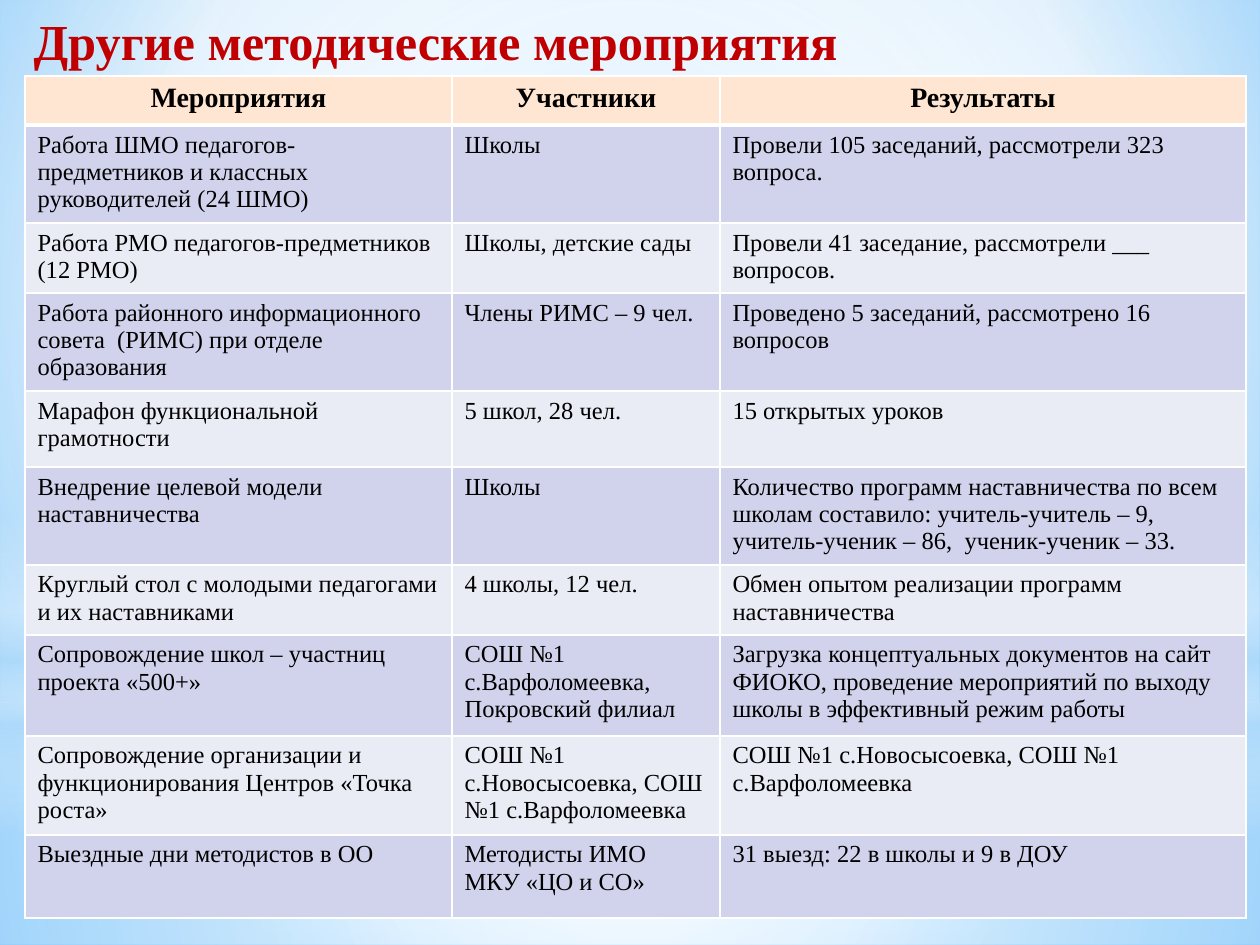
from lxml import etree
from pptx import Presentation
from pptx.dml.color import RGBColor
from pptx.enum.shapes import MSO_SHAPE
from pptx.enum.text import MSO_ANCHOR, PP_ALIGN
from pptx.oxml import parse_xml
from pptx.oxml.ns import qn
from pptx.util import Emu, Pt

RECT, OVAL = MSO_SHAPE.RECTANGLE, MSO_SHAPE.OVAL
TOP = MSO_ANCHOR.TOP
LEFT, CENTER = PP_ALIGN.LEFT, PP_ALIGN.CENTER
NS = "http://schemas.openxmlformats.org/drawingml/2006/main"
FONT = "Times New Roman"
COLORS = {
    "title": "C00000", "text": "000000", "white": "FFFFFF", "haze": "B4DCFA",
    "sky": "9ED5FF", "deep": "5BB9FF",
    "head": "FFE6D3", "odd": "D0D3EB", "even": "E9EBF5",
}


def px(n):
    return Emu(round(n * 914400 / 126))


class Deck:
    def __init__(self, width, height):
        self.prs = Presentation()
        self.prs.slide_width, self.prs.slide_height = px(width), px(height)
        self.s = self.prs.slides.add_slide(self.prs.slide_layouts[5])

    def gradient(self, parent, stops, focus=None):
        """Swap an empty fill for a gradient: circular around focus, else vertical."""
        grad = etree.Element(qn("a:gradFill"), nsmap={"a": NS}, rotWithShape="1")
        gs_list = etree.SubElement(grad, qn("a:gsLst"))
        for pos, color, alpha in stops:
            gs = etree.SubElement(gs_list, qn("a:gs"), pos=str(pos * 1000))
            clr = etree.SubElement(gs, qn("a:srgbClr"), val=COLORS[color])
            if alpha < 100:
                etree.SubElement(clr, qn("a:alpha"), val=str(alpha * 1000))
        if focus:
            path = etree.SubElement(grad, qn("a:path"), path="circle")
            sides = {k: str(v * 1000) for k, v in zip("ltrb", focus)}
            etree.SubElement(path, qn("a:fillToRect"), **sides)
        else:
            etree.SubElement(grad, qn("a:lin"), ang="5400000", scaled="0")
        parent.replace(parent.find(qn("a:noFill")), parse_xml(etree.tostring(grad)))

    def background(self, stops, focus):
        self.s.background.fill.background()
        self.gradient(self.s._element.find(".//" + qn("p:bgPr")), stops, focus)

    def glow(self, kind, x, y, w, h, stops, focus=None):
        sp = self.s.shapes.add_shape(kind, px(x), px(y), px(w), px(h))
        sp.shadow.inherit = False
        sp.fill.background()
        self.gradient(sp._element.spPr, stops, focus)
        sp.line.fill.background()

    def run(self, p, text, size, color, bold=False):
        r = p.add_run()
        r.text = text
        r.font.name, r.font.size, r.font.bold = FONT, Pt(size), bold
        r.font.color.rgb = RGBColor.from_string(COLORS[color])

    def title(self, text, x, y, w, h):
        sp = self.s.shapes.title
        self.s.shapes._spTree.append(sp._element)  # above the backdrop
        sp.left, sp.top, sp.width, sp.height = px(x), px(y), px(w), px(h)
        tf = sp.text_frame
        tf.word_wrap, tf.vertical_anchor = True, TOP
        tf.margin_top, tf.margin_bottom = px(14), 0
        p = tf.paragraphs[0]
        p.alignment = LEFT
        self.run(p, text, 28.8, "title", True)

    def borders(self, cell, widths):
        tc_pr = cell._tc.get_or_add_tcPr()
        for side, width in widths.items():
            ln = etree.SubElement(tc_pr, qn("a:ln" + side), w=str(Pt(width)))
            fill = etree.SubElement(ln, qn("a:solidFill"))
            etree.SubElement(fill, qn("a:srgbClr"), val=COLORS["white"])

    def table(self, x, y, widths, heights, rows):
        tbl = self.s.shapes.add_table(len(rows), len(widths), px(x), px(y),
                                      px(sum(widths)), px(sum(heights))).table
        for col, w in zip(tbl.columns, widths):
            col.width = px(w)
        for i, (height, row) in enumerate(zip(heights, rows)):
            tbl.rows[i].height = px(height)
            head = i == 0
            fill = "head" if head else "odd" if i % 2 else "even"
            for j, text in enumerate(row):
                cell = tbl.cell(i, j)
                self.borders(cell, {"L": 1, "R": 1, "T": 3 if i == 1 else 1,
                                    "B": 3 if head else 1})
                cell.fill.solid()
                cell.fill.fore_color.rgb = RGBColor.from_string(COLORS[fill])
                tf = cell.text_frame
                for k, line in enumerate(text.split("\n")):
                    p = tf.add_paragraph() if k else tf.paragraphs[0]
                    p.alignment = CENTER if head else LEFT
                    self.run(p, line, 16 if head else 14, "text", head)


ROWS = [
    ("Мероприятия", "Участники", "Результаты"),
    ("Работа ШМО педагогов-предметников и классных руководителей (24 ШМО)",
     "Школы", "Провели 105 заседаний, рассмотрели 323 вопроса."),
    ("Работа РМО педагогов-предметников (12 РМО)",
     "Школы, детские сады", "Провели 41 заседание, рассмотрели ___ вопросов."),
    ("Работа районного информационного совета  (РИМС) при отделе образования",
     "Члены РИМС – 9 чел.", "Проведено 5 заседаний, рассмотрено 16 вопросов"),
    ("Марафон функциональной грамотности", "5 школ, 28 чел.", "15 открытых уроков"),
    ("Внедрение целевой модели наставничества", "Школы",
     "Количество программ наставничества по всем школам составило: "
     "учитель-учитель – 9,  учитель-ученик – 86,  ученик-ученик – 33."),
    ("Круглый стол с молодыми педагогами и их наставниками",
     "4 школы, 12 чел.", "Обмен опытом реализации программ наставничества"),
    ("Сопровождение школ – участниц проекта «500+»",
     "СОШ №1 с.Варфоломеевка,\nПокровский филиал",
     "Загрузка концептуальных документов на сайт ФИОКО, проведение "
     "мероприятий по выходу школы в эффективный режим работы"),
    ("Сопровождение организации и функционирования Центров «Точка роста»",
     "СОШ №1 с.Новосысоевка, СОШ №1 с.Варфоломеевка",
     "СОШ №1 с.Новосысоевка, СОШ №1 с.Варфоломеевка"),
    ("Выездные дни методистов в ОО", "Методисты ИМО МКУ «ЦО и СО»",
     "31 выезд: 22 в школы и 9 в ДОУ"),
]


def main():
    deck = Deck(1260, 945)
    middle = (50, 50, 50, 50)

    # Sky backdrop
    deck.background([(0, "sky", 100), (60, "white", 100), (100, "deep", 100)],
                    (20, 10, 20, 60))
    deck.glow(RECT, 0, 703, 1260, 242,
              [(0, "white", 91), (37, "white", 76), (100, "haze", 79)], middle)
    deck.glow(RECT, 0, 0, 1260, 703,
              [(0, "white", 89), (48, "white", 62), (100, "haze", 79)], middle)
    deck.glow(RECT, 0, 519, 1260, 315,
              [(0, "white", 0), (29, "white", 30), (45, "haze", 40),
               (55, "white", 26), (65, "haze", 60), (100, "white", 0)])
    deck.glow(OVAL, 0, 220, 1260, 703, [(0, "white", 100), (56, "white", 0)], middle)

    # Title and table of events
    deck.title("Другие методические мероприятия", 21, -4, 1134, 69)
    deck.table(25, 76, (427, 268, 526),
               (49, 98, 70, 98, 76, 98, 70, 101, 99, 83), ROWS)

    deck.prs.save("out.pptx")


if __name__ == "__main__":
    main()
